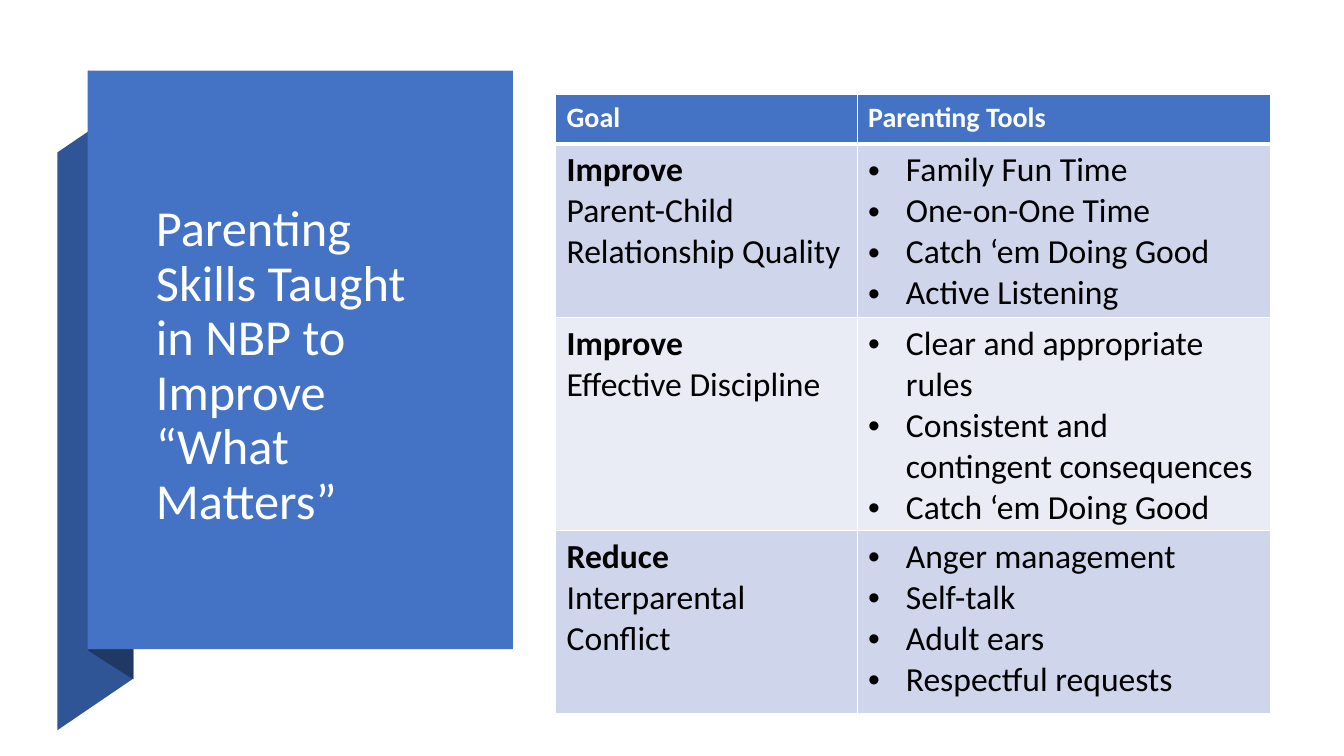
from dataclasses import dataclass
from typing import NamedTuple

from lxml import etree
from pptx import Presentation
from pptx import util as u
from pptx.dml.color import RGBColor
from pptx.enum import shapes, text
from pptx.oxml import ns


@dataclass(frozen=True)
class Theme:
    font: str = "Calibri"
    accent: str = "4472C4"
    fold: str = "2F5597"
    shade: str = "203864"
    band_dark: str = "CFD5EA"
    band_light: str = "E9EBF5"
    white: str = "FFFFFF"
    black: str = "000000"
    title_size: int = 36
    header_size: int = 20
    body_size: int = 24
    rule: int = 1
    header_rule: int = 3


class Span(NamedTuple):
    words: str
    bold: bool = False


@dataclass(frozen=True)
class Ribbon:
    color: str
    points: list[tuple[float, float]]


@dataclass(frozen=True)
class Goal:
    paragraphs: list[list[Span]]
    tools: list[str]
    height: float


THEME = Theme()
HEADINGS = ["Goal", "Parenting Tools"]
HEADER_HEIGHT = 1.24
COLUMN_WIDTHS = [7.6, 10.41]
BULLET_INDENT = 0.95

RIBBONS = [
    Ribbon(THEME.fold, [(1.45, 18.4), (3.36, 17.1), (3.36, 2.54), (1.45, 3.84)]),
    Ribbon(THEME.shade, [(2.23, 16.4), (3.36, 17.12), (3.36, 2.51), (2.23, 1.78)]),
]

GOALS = [
    Goal(
        [[Span("Improve", True)], [Span("Parent-Child Relationship Quality")]],
        ["Family Fun Time", "One-on-One Time", "Catch ‘em Doing Good", "Active Listening"],
        3.76,
    ),
    Goal(
        [[Span("Improve", True)], [Span("Effective Discipline")]],
        [
            "Clear and appropriate rules",
            "Consistent and contingent consequences",
            "Catch ‘em Doing Good",
        ],
        3.76,
    ),
    Goal(
        [[Span("Reduce", True), Span(" Interparental Conflict")]],
        ["Anger management", "Self-talk", "Adult ears", "Respectful requests"],
        4.6,
    ),
]


def paint(shape, color: str) -> None:
    shape.shadow.inherit = False
    shape.fill.solid()
    shape.fill.fore_color.rgb = RGBColor.from_string(color)
    shape.line.fill.background()


def style(font, size: int, color: str, bold: bool = False) -> None:
    font.name = THEME.font
    font.size = u.Pt(size)
    font.bold = bold
    font.color.rgb = RGBColor.from_string(color)


def draw_ribbon(page, ribbon: Ribbon) -> None:
    start, *others = [(u.Cm(x), u.Cm(y)) for x, y in ribbon.points]
    builder = page.shapes.build_freeform(*start)
    builder.add_line_segments(others, close=True)
    paint(builder.convert_to_shape(), ribbon.color)


def draw_title(page) -> None:
    panel = page.shapes.add_shape(
        shapes.MSO_SHAPE.RECTANGLE, u.Cm(2.21), u.Cm(1.78), u.Cm(10.72), u.Cm(14.58)
    )
    paint(panel, THEME.accent)
    box = page.shapes.add_textbox(u.Cm(3.68), u.Cm(4.24), u.Cm(7.65), u.Cm(10))
    frame = box.text_frame
    frame.word_wrap = True
    frame.vertical_anchor = text.MSO_ANCHOR.MIDDLE
    frame.text = "Parenting Skills Taught in NBP to Improve “What Matters”"
    para = frame.paragraphs[0]
    para.line_spacing = 0.9
    style(para.runs[0].font, THEME.title_size, THEME.white)


def add_border(cell, side: str, width: int) -> None:
    properties = cell._tc.get_or_add_tcPr()
    line = etree.SubElement(properties, ns.qn(f"a:ln{side}"), w=str(u.Pt(width)))
    fill = etree.SubElement(line, ns.qn("a:solidFill"))
    etree.SubElement(fill, ns.qn("a:srgbClr"), val=THEME.white)


def add_bullet(para) -> None:
    properties = para._p.get_or_add_pPr()
    indent = u.Cm(BULLET_INDENT)
    properties.set("marL", str(indent))
    properties.set("indent", str(-indent))
    etree.SubElement(properties, ns.qn("a:buFont"), typeface="Arial")
    etree.SubElement(properties, ns.qn("a:buChar"), char="•")


def fill_cell(
    cell,
    paragraphs: list[list[Span]],
    size: int,
    color: str,
    background: str,
    top: int,
    bottom: int,
    bulleted: bool = False,
) -> None:
    for side, width in zip("LRTB", (THEME.rule, THEME.rule, top, bottom)):
        add_border(cell, side, width)
    cell.fill.solid()
    cell.fill.fore_color.rgb = RGBColor.from_string(background)
    cell.margin_left = cell.margin_right = u.Cm(0.28)
    cell.margin_top = cell.margin_bottom = u.Cm(0.15)
    frame = cell.text_frame
    for index, spans in enumerate(paragraphs):
        para = frame.add_paragraph() if index else frame.paragraphs[0]
        if bulleted:
            add_bullet(para)
        for span in spans:
            run = para.add_run()
            run.text = span.words
            style(run.font, size, color, span.bold)


def draw_table(page) -> None:
    heights = [HEADER_HEIGHT, *(goal.height for goal in GOALS)]
    table = page.shapes.add_table(
        len(heights), len(COLUMN_WIDTHS), u.Cm(14), u.Cm(2.39),
        u.Cm(sum(COLUMN_WIDTHS)), u.Cm(sum(heights)),
    ).table
    for column, width in zip(table.columns, COLUMN_WIDTHS):
        column.width = u.Cm(width)
    for row, height in zip(table.rows, heights):
        row.height = u.Cm(height)
    for column, heading in enumerate(HEADINGS):
        fill_cell(
            table.cell(0, column), [[Span(heading, True)]], THEME.header_size,
            THEME.white, THEME.accent, THEME.rule, THEME.header_rule,
        )
    for row, goal in enumerate(GOALS, start=1):
        background = THEME.band_dark if row % 2 else THEME.band_light
        top = THEME.header_rule if row == 1 else THEME.rule
        tools = [[Span(tool)] for tool in goal.tools]
        for column, paragraphs in enumerate([goal.paragraphs, tools]):
            fill_cell(
                table.cell(row, column), paragraphs, THEME.body_size, THEME.black,
                background, top, THEME.rule, bulleted=column == 1,
            )


def main() -> None:
    deck = Presentation()
    deck.slide_width, deck.slide_height = u.Cm(33.87), u.Cm(19.05)
    page = deck.slides.add_slide(deck.slide_layouts[6])
    for ribbon in RIBBONS:
        draw_ribbon(page, ribbon)
    draw_title(page)
    draw_table(page)
    deck.save("out.pptx")


if __name__ == "__main__":
    main()
